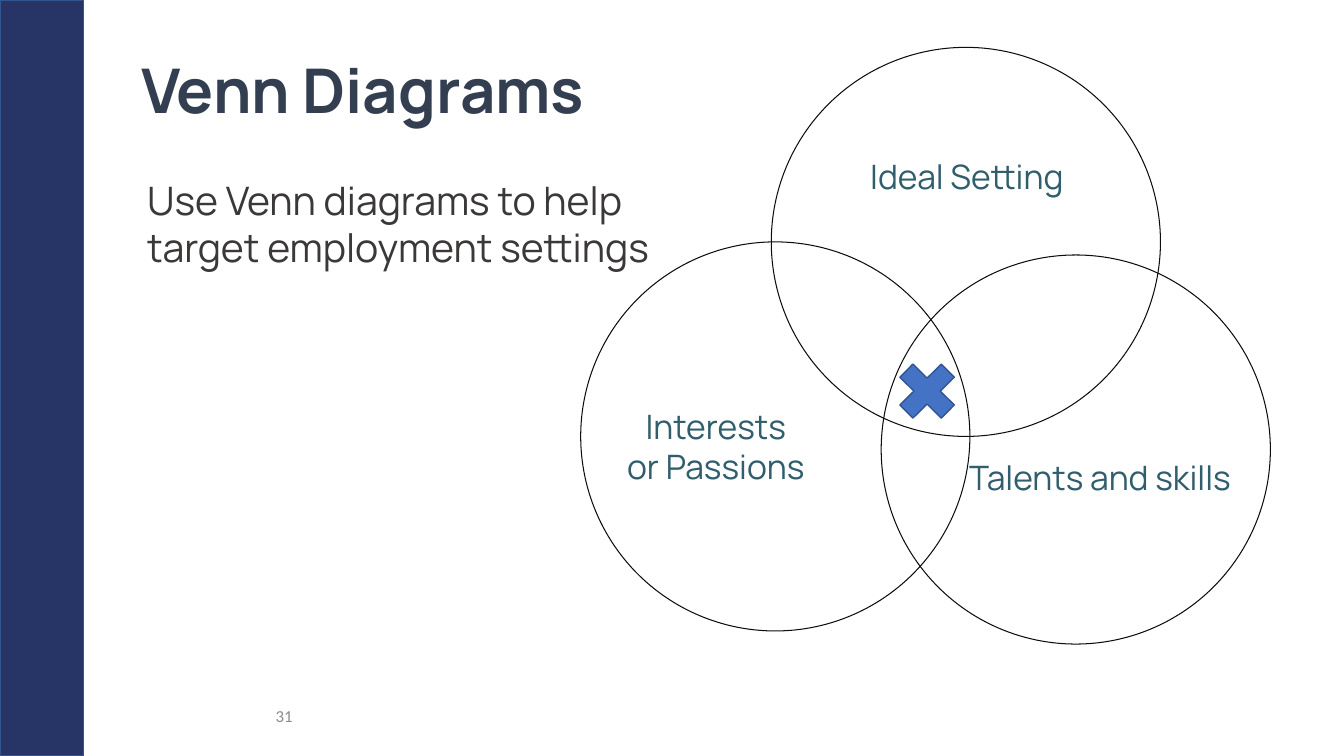
from pptx import Presentation
from pptx.dml.color import RGBColor
from pptx.enum.shapes import MSO_SHAPE as Preset
from pptx.enum.text import MSO_ANCHOR as Anchor, PP_ALIGN as Align
from pptx.util import Inches, Pt

NAVY = RGBColor(0x27, 0x34, 0x66)
BLUE = RGBColor(0x44, 0x72, 0xC4)
EDGE = RGBColor(0x32, 0x54, 0x91)
INK = RGBColor(0x0D, 0x0D, 0x0D)
SLATE = RGBColor(0x33, 0x3F, 0x50)
CHARCOAL = RGBColor(0x3B, 0x38, 0x38)
TEAL = RGBColor(0x31, 0x5E, 0x6D)
GRAY = RGBColor(0x8C, 0x8C, 0x8C)

SLIDE_W, SLIDE_H = 13.33, 7.5
DIAMETER = 3.86
LABEL_W = 3

# Circle left and top, label, label left and top relative to the circle, label height
SETS = [
    (7.65, 0.47, "Ideal Setting", 0.44, 1.03, 0.5),
    (5.76, 2.4, "Interests\nor Passions", -0.16, 1.57, 0.91),
    (8.74, 2.53, "Talents and skills", 0.67, 1.75, 0.91),
]


def inches(box):
    return [Inches(length) for length in box]


def write(holder, text, size, color, font="Manrope", bold=False,
          align=Align.LEFT, spacing=1.0):
    frame = holder.text_frame
    frame.word_wrap = True
    frame.vertical_anchor = Anchor.MIDDLE
    frame.text = text
    for line in frame.paragraphs:
        line.alignment = align
        line.line_spacing = spacing
        line.font.name = font
        line.font.size = Pt(size)
        line.font.bold = bold
        line.font.color.rgb = color


def add_text(slide, box, text, **style):
    write(slide.shapes.add_textbox(*inches(box)), text, **style)


def draw(slide, preset, box, line, width, fill=None):
    figure = slide.shapes.add_shape(preset, *inches(box))
    figure.shadow.inherit = False
    if fill is None:
        figure.fill.background()
    else:
        figure.fill.solid()
        figure.fill.fore_color.rgb = fill
    figure.line.color.rgb = line
    figure.line.width = Pt(width)


def add_heading(slide, box):
    left, top, width, height = box
    title = slide.shapes.title
    title.left, title.top, title.width, title.height = inches(box)
    write(title, "Venn Diagrams", size=44, color=SLATE, bold=True, spacing=0.9)
    add_text(slide, (left + 0.06, top + 1.04, 5.59, 1.96),
             "Use Venn diagrams to help target employment settings",
             size=28, color=CHARCOAL)


def add_venn(slide):
    for left, top, label, dx, dy, height in SETS:
        draw(slide, Preset.OVAL, (left, top, DIAMETER, DIAMETER), INK, 0.75)
        add_text(slide, (left + dx, top + dy, LABEL_W, height), label,
                 size=24, color=TEAL, align=Align.CENTER)
    # Mark where all three sets meet
    draw(slide, Preset.MATH_MULTIPLY, (8.8, 3.49, 0.79, 0.78), EDGE, 1, BLUE)


def main():
    deck = Presentation()
    deck.slide_width, deck.slide_height = inches((SLIDE_W, SLIDE_H))
    slide = deck.slides.add_slide(deck.slide_layouts[5])

    # Side band
    draw(slide, Preset.RECTANGLE, (0, 0, 0.83, SLIDE_H), EDGE, 1, NAVY)
    add_heading(slide, (1.3, 0.2, 11.5, 1.45))
    # Page number
    add_text(slide, (0, 6.9, 3, 0.4), "31", size=12, color=GRAY,
             font="Calibri", align=Align.RIGHT)
    add_venn(slide)
    deck.save("out.pptx")


if __name__ == "__main__":
    main()
